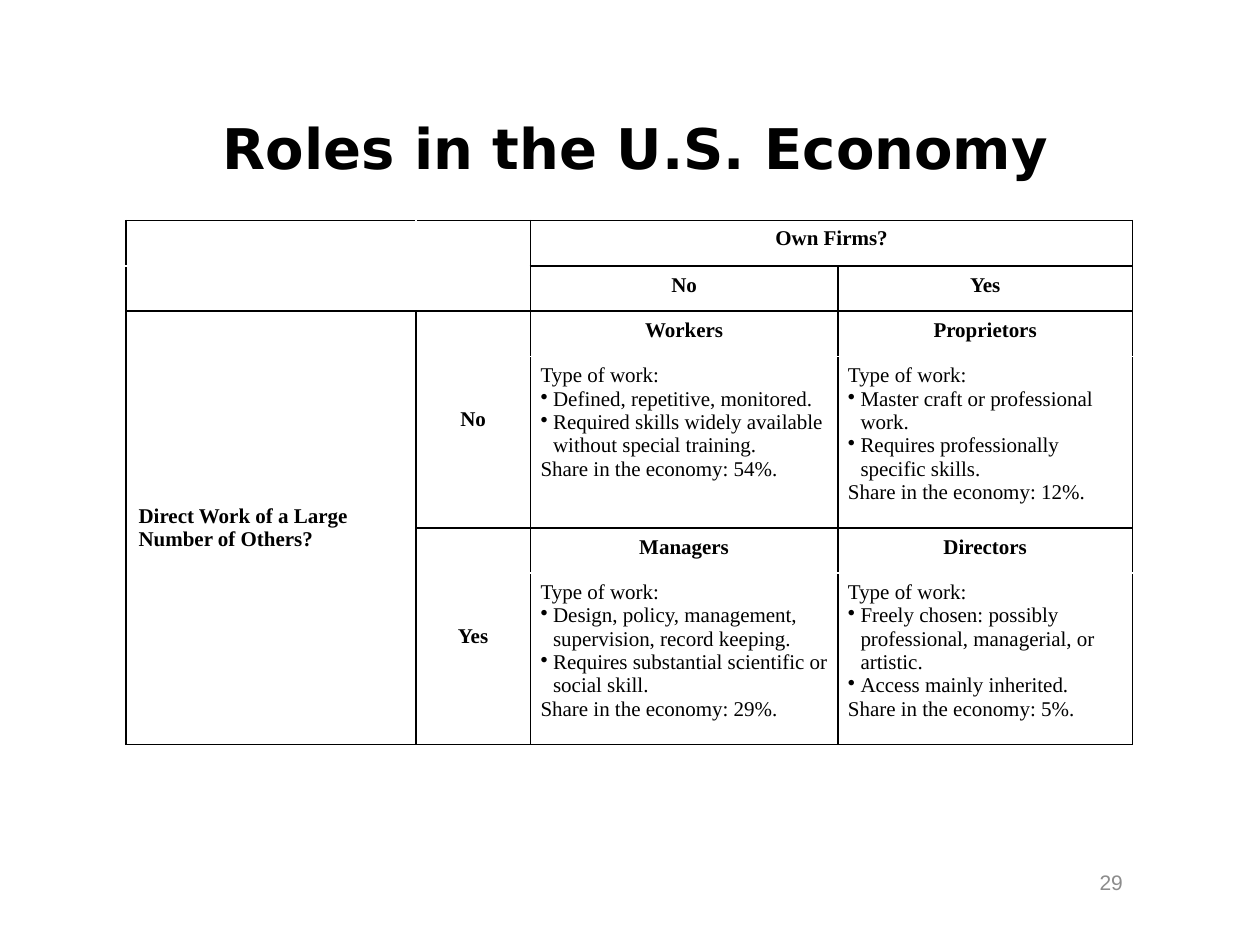
from lxml import etree
from pptx import Presentation, util as u
from pptx.dml.color import RGBColor
from pptx.enum import text
from pptx.oxml.ns import qn

BLACK = RGBColor(0, 0, 0)
GREY = RGBColor(0x8C, 0x8C, 0x8C)
SERIF = "Times New Roman"
CENTER, LEFT, RIGHT = text.PP_ALIGN.CENTER, text.PP_ALIGN.LEFT, text.PP_ALIGN.RIGHT
MIDDLE, TOP = text.MSO_ANCHOR.MIDDLE, text.MSO_ANCHOR.TOP

TITLE = "Roles in the U.S. Economy"
PAGE = "29"
COLS = [2.3, 0.91, 2.44, 2.34]
ROWS = [0.36, 0.36, 0.36, 1.36, 0.36, 1.36]
WIDE, TIGHT = (0.1, 0.05), (0.08, 0.06)

# row, column, row span, column span, text, alignment, anchor, insets
HEADERS = [
    (0, 2, 1, 2, "Own Firms?", CENTER, TOP, WIDE),
    (1, 2, 1, 1, "No", CENTER, TOP, TIGHT),
    (1, 3, 1, 1, "Yes", CENTER, TOP, TIGHT),
    (2, 0, 4, 1, "Direct Work of a Large Number of Others?", LEFT, MIDDLE, WIDE),
    (2, 1, 2, 1, "No", CENTER, MIDDLE, WIDE),
    (4, 1, 2, 1, "Yes", CENTER, MIDDLE, WIDE),
]
ROLES = [
    [("Workers", ["Defined, repetitive, monitored.",
                  "Required skills widely available without special training."], 54),
     ("Proprietors", ["Master craft or professional work.",
                      "Requires professionally specific skills."], 12)],
    [("Managers", ["Design, policy, management, supervision, record keeping.",
                   "Requires substantial scientific or social skill."], 29),
     ("Directors", ["Freely chosen: possibly professional, managerial, or artistic.",
                    "Access mainly inherited."], 5)],
]


def add_run(p, words, size, font, color=BLACK, bold=False):
    r = p.add_run()
    r.text = words
    f = r.font
    f.size, f.name, f.bold = u.Pt(size), font, bold
    f.color.rgb = color


def add_text(s, box, words, align, size, font, color=BLACK, bold=False, inset=(0.1, 0.05)):
    tf = s.shapes.add_textbox(*map(u.Inches, box)).text_frame
    tf.word_wrap = True
    tf.vertical_anchor = MIDDLE
    tf.margin_left = tf.margin_right = u.Inches(inset[0])
    tf.margin_top = tf.margin_bottom = u.Inches(inset[1])
    p = tf.paragraphs[0]
    p.alignment = align
    add_run(p, words, size, font, color, bold)


def set_insets(cell, inset):
    cell.margin_left = cell.margin_right = u.Inches(inset[0])
    cell.margin_top = cell.margin_bottom = u.Inches(inset[1])


def fill_cell(cell, lines, align=LEFT, anchor=TOP, inset=TIGHT, bold=False):
    set_insets(cell, inset)
    cell.vertical_anchor = anchor
    tf = cell.text_frame
    for i, (words, bullet) in enumerate(lines):
        p = tf.add_paragraph() if i else tf.paragraphs[0]
        p.alignment = align
        add_run(p, words, 12, SERIF, bold=bold)
        if bullet:
            pPr = p._p.get_or_add_pPr()
            pPr.set("marL", str(u.Inches(0.1)))
            pPr.set("indent", str(-u.Inches(0.1)))
            etree.SubElement(pPr, qn("a:buChar")).set("char", "•")


def add_borders(cell, sides):
    tcPr = cell._tc.get_or_add_tcPr()
    for i, side in enumerate(k for k in "LRTB" if k in sides):
        ln = etree.Element(qn("a:ln" + side), w=str(u.Pt(1)))
        fill = etree.SubElement(ln, qn("a:solidFill"))
        etree.SubElement(fill, qn("a:srgbClr")).set("val", str(BLACK))
        tcPr.insert(i, ln)


def frame_block(tbl, row, col, height, width):
    for r in range(height):
        for c in range(width):
            cell = tbl.cell(row + r, col + c)
            edges = {"L": c == 0, "R": c == width - 1, "T": r == 0, "B": r == height - 1}
            merged = cell.is_merge_origin or cell.is_spanned
            add_borders(cell, [k for k, outer in edges.items() if outer or merged])


def add_roles_table(s):
    tbl = s.shapes.add_table(len(ROWS), len(COLS), u.Inches(1), u.Inches(1.75),
                             u.Inches(sum(COLS)), u.Inches(sum(ROWS))).table
    tbl.first_row = tbl.horz_banding = False
    for column, width in zip(tbl.columns, COLS):
        column.width = u.Inches(width)
    for row, height in zip(tbl.rows, ROWS):
        row.height = u.Inches(height)
    for cell in tbl.iter_cells():
        cell.fill.background()
        set_insets(cell, (0.02, 0.02))

    frame_block(tbl, 0, 0, 2, 2)
    for row, col, height, width, words, align, anchor, inset in HEADERS:
        cell = tbl.cell(row, col)
        if height * width > 1:
            cell.merge(tbl.cell(row + height - 1, col + width - 1))
        fill_cell(cell, [(words, False)], align, anchor, inset, bold=True)
        frame_block(tbl, row, col, height, width)

    for i, pair in enumerate(ROLES):
        for j, (role, work, share) in enumerate(pair):
            row, col = 2 + 2 * i, 2 + j
            fill_cell(tbl.cell(row, col), [(role, False)], CENTER, bold=True)
            lines = [("Type of work:", False)] + [(w, True) for w in work]
            lines.append((f"Share in the economy: {share}%.", False))
            fill_cell(tbl.cell(row + 1, col), lines)
            frame_block(tbl, row, col, 2, 1)


def main():
    prs = Presentation()
    prs.slide_width, prs.slide_height = u.Inches(10), u.Inches(7.5)
    s = prs.slides.add_slide(prs.slide_layouts[6])
    add_text(s, (0.42, 0.67, 9.25, 1), TITLE, CENTER, 32, "DejaVu Sans", bold=True, inset=(0.5, 0))
    add_text(s, (6.76, 6.8, 2.25, 0.4), PAGE, RIGHT, 12, "Arial", GREY)
    add_roles_table(s)
    prs.save("out.pptx")


if __name__ == "__main__":
    main()
